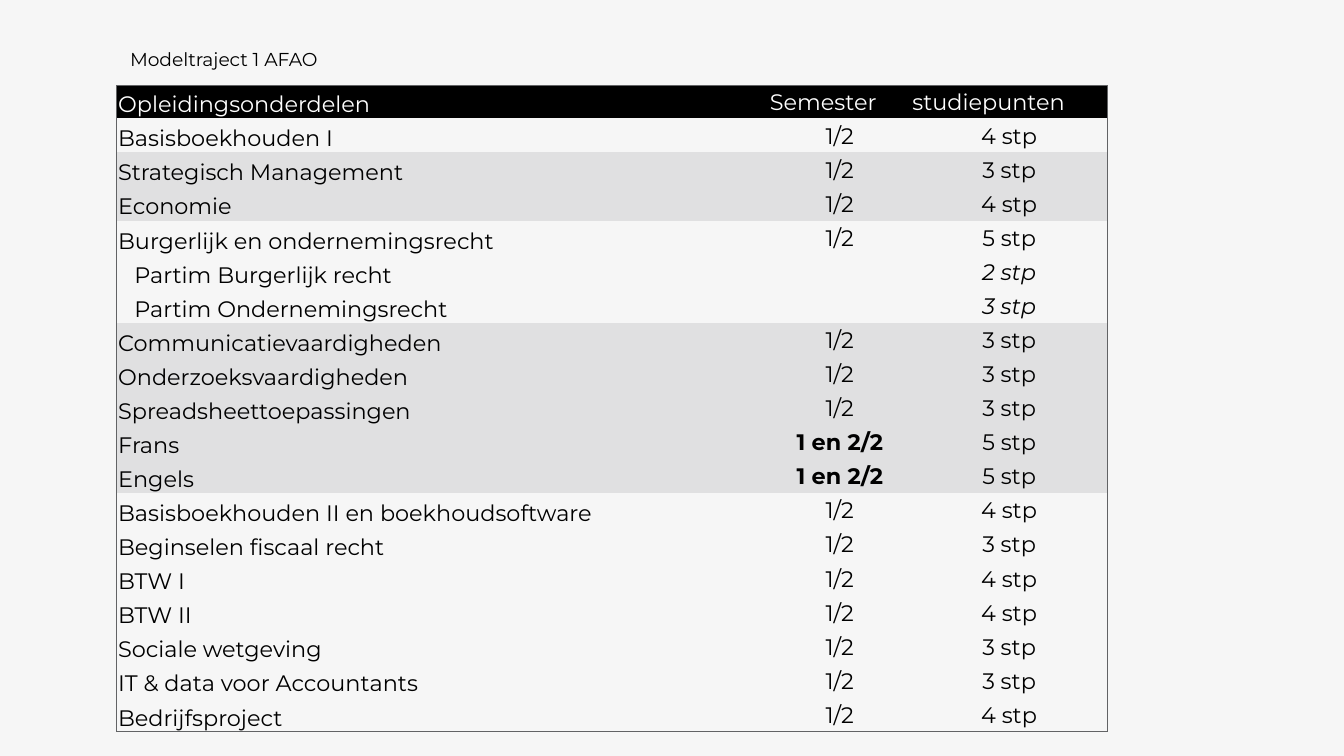
from typing import NamedTuple

from lxml.etree import SubElement
from pptx import Presentation
from pptx.dml.color import RGBColor
from pptx.enum.text import MSO_ANCHOR as Anchor, PP_ALIGN as Align
from pptx.oxml.ns import qn
from pptx.util import Pt

FONT = "Montserrat"
BLACK, WHITE, GREY, PAPER, BORDER = "000000", "FFFFFF", "E0E0E1", "F6F6F6", "626365"
LEFT, TOP = 62.6, 46
COLUMN_WIDTHS = (349.2, 76.3, 105.1)
HEADER_HEIGHT, ROW_HEIGHT = 17.4, 18.27
NO_STYLE_NO_GRID = "{2D5ABB26-0587-4C30-8999-92F81FD0307C}"
HEADINGS = ("Opleidingsonderdelen", "Semester", "studiepunten")


class Course(NamedTuple):
    name: str
    points: int
    semester: str = "1/2"
    shaded: bool = False
    partim: bool = False


COURSES = [
    Course("Basisboekhouden I", 4),
    Course("Strategisch Management", 3, shaded=True),
    Course("Economie", 4, shaded=True),
    Course("Burgerlijk en ondernemingsrecht", 5),
    Course("Partim Burgerlijk recht", 2, "", partim=True),
    Course("Partim Ondernemingsrecht", 3, "", partim=True),
    Course("Communicatievaardigheden", 3, shaded=True),
    Course("Onderzoeksvaardigheden", 3, shaded=True),
    Course("Spreadsheettoepassingen", 3, shaded=True),
    Course("Frans", 5, "1 en 2/2", shaded=True),
    Course("Engels", 5, "1 en 2/2", shaded=True),
    Course("Basisboekhouden II en boekhoudsoftware", 4),
    Course("Beginselen fiscaal recht", 3),
    Course("BTW I", 4),
    Course("BTW II", 4),
    Course("Sociale wetgeving", 3),
    Course("IT & data voor Accountants", 3),
    Course("Bedrijfsproject", 4),
]


def rgb(color: str) -> RGBColor:
    return RGBColor.from_string(color)


def set_font(p, size: float, color: str, bold: bool = False, italic: bool = False) -> None:
    font = p.font
    font.name, font.size, font.bold, font.italic = FONT, Pt(size), bold, italic
    font.color.rgb = rgb(color)


def add_border(cell, side: str) -> None:
    """Draw one edge of a cell; side is L, R, T or B."""
    line = SubElement(cell._tc.get_or_add_tcPr(), qn(f"a:ln{side}"), w=str(Pt(0.75)))
    SubElement(SubElement(line, qn("a:solidFill")), qn("a:srgbClr"), val=BORDER)


def fill_cell(cell, text: str, first: bool, fill: str | None, color: str = BLACK,
              align: Align = Align.LEFT, indent: float = 0.7,
              bold: bool = False, italic: bool = False) -> None:
    cell.margin_left, cell.margin_right = Pt(indent), Pt(0.7)
    cell.margin_top, cell.margin_bottom = Pt(0.7), Pt(0)
    cell.vertical_anchor = Anchor.BOTTOM if first else Anchor.MIDDLE
    if fill:
        cell.fill.solid()
        cell.fill.fore_color.rgb = rgb(fill)
    else:
        cell.fill.background()
    p = cell.text_frame.paragraphs[0]
    p.alignment = align
    if text:
        p.add_run().text = text
    else:
        p._p.get_or_add_endParaRPr().set("sz", "1200")
    set_font(p, 12, color, bold, italic)


def add_title(s, text: str) -> None:
    tf = s.shapes.add_textbox(Pt(LEFT), Pt(22.3), Pt(324), Pt(25.2)).text_frame
    tf.word_wrap = True
    p = tf.paragraphs[0]
    p.add_run().text = text
    set_font(p, 10, BLACK)


def add_course_table(s) -> None:
    rows, cols = len(COURSES) + 1, len(COLUMN_WIDTHS)
    height = HEADER_HEIGHT + ROW_HEIGHT * len(COURSES)
    frame = s.shapes.add_table(rows, cols, Pt(LEFT), Pt(TOP), Pt(sum(COLUMN_WIDTHS)), Pt(height))
    table = frame.table
    table.horz_banding = False
    table._tbl.tblPr.find(qn("a:tableStyleId")).text = NO_STYLE_NO_GRID
    for column, width in zip(table.columns, COLUMN_WIDTHS):
        column.width = Pt(width)
    for i, row in enumerate(table.rows):
        row.height = Pt(ROW_HEIGHT if i else HEADER_HEIGHT)
        for j, cell in enumerate(row.cells):
            edges = {"L": j == 0, "R": j == cols - 1, "T": i == 0, "B": i == rows - 1}
            for side, outer in edges.items():
                if outer:
                    add_border(cell, side)

    for j, heading in enumerate(HEADINGS):
        fill_cell(table.cell(0, j), heading, j == 0, BLACK, WHITE)
    for i, course in enumerate(COURSES, 1):
        fill = GREY if course.shaded else None
        fill_cell(table.cell(i, 0), course.name, True, fill,
                  indent=9.4 if course.partim else 0.7)
        fill_cell(table.cell(i, 1), course.semester, False, fill, align=Align.CENTER,
                  bold=course.semester == "1 en 2/2")
        fill_cell(table.cell(i, 2), f"{course.points} stp", False, fill, align=Align.CENTER,
                  italic=course.partim)


def main() -> None:
    prs = Presentation()
    prs.slide_width, prs.slide_height = Pt(720), Pt(405)
    s = prs.slides.add_slide(prs.slide_layouts[6])
    s.background.fill.solid()
    s.background.fill.fore_color.rgb = rgb(PAPER)
    add_course_table(s)
    add_title(s, "Modeltraject 1 AFAO")
    prs.save("out.pptx")


if __name__ == "__main__":
    main()
